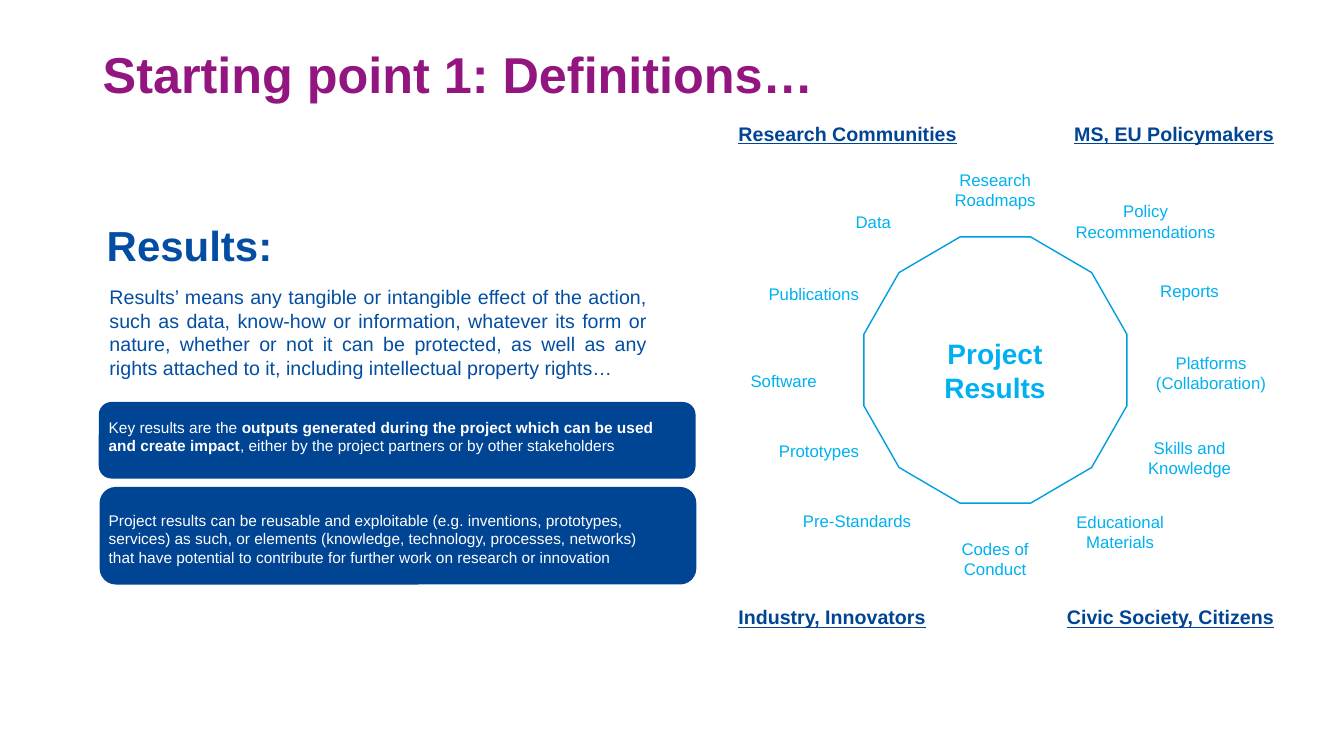
from dataclasses import dataclass

from pptx import Presentation
from pptx.dml.color import RGBColor
from pptx.enum.shapes import MSO_SHAPE
from pptx.enum.text import MSO_ANCHOR, MSO_AUTO_SIZE, PP_ALIGN
from pptx.shapes.autoshape import Shape
from pptx.slide import Slide
from pptx.util import Cm, Pt

PURPLE = RGBColor(0x93, 0x16, 0x80)
BLUE = RGBColor(0x03, 0x4E, 0xA2)
NAVY = RGBColor(0x00, 0x44, 0x94)
SKY = RGBColor(0x00, 0xB0, 0xF0)
RING_BLUE = RGBColor(0x00, 0x9E, 0xE0)
WHITE = RGBColor(0xFF, 0xFF, 0xFF)

LABEL_WIDTH, LABEL_HEIGHT = 3.48, 1.65


@dataclass(frozen=True)
class Box:
    """Position and size in centimetres."""
    left: float
    top: float
    width: float
    height: float


@dataclass(frozen=True)
class Style:
    size: float
    color: RGBColor
    bold: bool = False
    underline: bool = False
    align: PP_ALIGN = PP_ALIGN.LEFT
    anchor: MSO_ANCHOR = MSO_ANCHOR.TOP
    line_spacing: float = 1.0
    bottom_inset: float = 0.13
    grow: bool = False


@dataclass(frozen=True)
class ResultLabel:
    text: str
    center_x: float
    center_y: float
    width: float = LABEL_WIDTH


@dataclass(frozen=True)
class Panel:
    box: Box
    text_box: Box
    runs: list[tuple[str, bool]]


TITLE = Style(36, PURPLE, bold=True, anchor=MSO_ANCHOR.BOTTOM, line_spacing=0.9, bottom_inset=0)
HEADING = Style(30, BLUE, bold=True, line_spacing=0.9, bottom_inset=0)
DEFINITION = Style(14, BLUE, align=PP_ALIGN.JUSTIFY)
PANEL_TEXT = Style(11, WHITE, grow=True)
LABEL = Style(12, SKY, align=PP_ALIGN.CENTER, anchor=MSO_ANCHOR.MIDDLE)
CENTER = Style(20, SKY, bold=True, align=PP_ALIGN.CENTER, anchor=MSO_ANCHOR.MIDDLE)

PANELS = [
    Panel(Box(2.49, 10.13, 15.04, 1.93), Box(2.49, 10.41, 14.86, 1.19), [
        ("Key results are the ", False),
        ("outputs generated during the project which can be used and create impact", True),
        (", either by the project partners or by other stakeholders", False),
    ]),
    Panel(Box(2.51, 12.27, 15.04, 2.46), Box(2.49, 12.75, 13.94, 1.68), [
        ("Project results can be reusable and exploitable (e.g. inventions, prototypes, "
         "services) as such, or elements (knowledge, technology, processes, networks) "
         "that have potential to contribute for further work on research or innovation", False),
    ]),
]

RESULT_LABELS = [
    ResultLabel("Research Roadmaps", 25.08, 4.79),
    ResultLabel("Policy Recommendations", 28.87, 5.58, width=4.85),
    ResultLabel("Reports", 29.98, 7.32),
    ResultLabel("Platforms (Collaboration)", 30.52, 9.39),
    ResultLabel("Skills and Knowledge", 29.98, 11.54),
    ResultLabel("Educational Materials", 28.23, 13.4),
    ResultLabel("Codes of Conduct", 25.08, 14.08),
    ResultLabel("Pre-Standards", 21.6, 13.12),
    ResultLabel("Prototypes", 20.64, 11.37),
    ResultLabel("Software", 19.75, 9.59),
    ResultLabel("Publications", 20.51, 7.4),
    ResultLabel("Data", 22.01, 5.58),
]

AUDIENCE_ROWS = [
    (2.59, "Research Communities", "MS, EU Policymakers"),
    (14.78, "Industry, Innovators", "Civic Society, Citizens"),
]
AUDIENCE_COLUMNS = [(18.36, PP_ALIGN.LEFT), (25.45, PP_ALIGN.RIGHT)]


def add_text(slide: Slide, box: Box, style: Style, runs: list[tuple[str, bool]]) -> None:
    """Add a one-paragraph text box; each run is its text and whether it is bold."""
    shape = slide.shapes.add_textbox(Cm(box.left), Cm(box.top), Cm(box.width), Cm(box.height))
    frame = shape.text_frame
    frame.word_wrap = True
    frame.auto_size = MSO_AUTO_SIZE.SHAPE_TO_FIT_TEXT if style.grow else MSO_AUTO_SIZE.NONE
    frame.vertical_anchor = style.anchor
    frame.margin_bottom = Cm(style.bottom_inset)
    paragraph = frame.paragraphs[0]
    paragraph.alignment = style.align
    paragraph.line_spacing = style.line_spacing
    for text, bold in runs:
        run = paragraph.add_run()
        run.text = text
        run.font.name = "Arial"
        run.font.size = Pt(style.size)
        run.font.bold = bold
        run.font.underline = style.underline
        run.font.color.rgb = style.color


def add_line_of_text(slide: Slide, box: Box, style: Style, text: str) -> None:
    """Add a text box with a single run."""
    add_text(slide, box, style, [(text, style.bold)])


def add_plain_shape(slide: Slide, kind: MSO_SHAPE, box: Box) -> Shape:
    shape = slide.shapes.add_shape(
        kind, Cm(box.left), Cm(box.top), Cm(box.width), Cm(box.height))
    shape.shadow.inherit = False
    return shape


def add_panel(slide: Slide, panel: Panel) -> None:
    shape = add_plain_shape(slide, MSO_SHAPE.ROUNDED_RECTANGLE, panel.box)
    shape.fill.solid()
    shape.fill.fore_color.rgb = NAVY
    shape.line.fill.background()
    add_text(slide, panel.text_box, PANEL_TEXT, panel.runs)


def add_results_wheel(slide: Slide) -> None:
    ring = add_plain_shape(slide, MSO_SHAPE.DODECAGON, Box(21.77, 5.97, 6.63, 6.71))
    ring.fill.background()
    ring.line.color.rgb = RING_BLUE
    ring.line.width = Pt(1)
    for label in RESULT_LABELS:
        box = Box(label.center_x - label.width / 2, label.center_y - LABEL_HEIGHT / 2,
                  label.width, LABEL_HEIGHT)
        add_line_of_text(slide, box, LABEL, label.text)
    add_line_of_text(slide, Box(22.89, 8.1, 4.37, 2.46), CENTER, "Project Results")


def add_audiences(slide: Slide) -> None:
    for top, *names in AUDIENCE_ROWS:
        for (left, align), name in zip(AUDIENCE_COLUMNS, names):
            style = Style(14, NAVY, bold=True, underline=True, align=align,
                          anchor=MSO_ANCHOR.MIDDLE)
            add_line_of_text(slide, Box(left, top, 6.91, 1.55), style, name)


def main() -> None:
    presentation = Presentation()
    presentation.slide_width = Cm(33.87)
    presentation.slide_height = Cm(19.05)
    slide = presentation.slides.add_slide(presentation.slide_layouts[6])

    add_line_of_text(slide, Box(2.34, 1.3, 29.21, 1.32), TITLE, "Starting point 1: Definitions…")
    add_line_of_text(slide, Box(2.44, 5.54, 13.03, 2.41), HEADING, "Results:")
    add_line_of_text(
        slide, Box(2.51, 7.06, 14.05, 2.49), DEFINITION,
        "Results’ means any tangible or intangible effect of the action, such as data, "
        "know-how or information, whatever its form or nature, whether or not it can be "
        "protected, as well as any rights attached to it, including intellectual property "
        "rights…")
    for panel in PANELS:
        add_panel(slide, panel)
    add_results_wheel(slide)
    add_audiences(slide)

    presentation.save("out.pptx")


if __name__ == "__main__":
    main()
